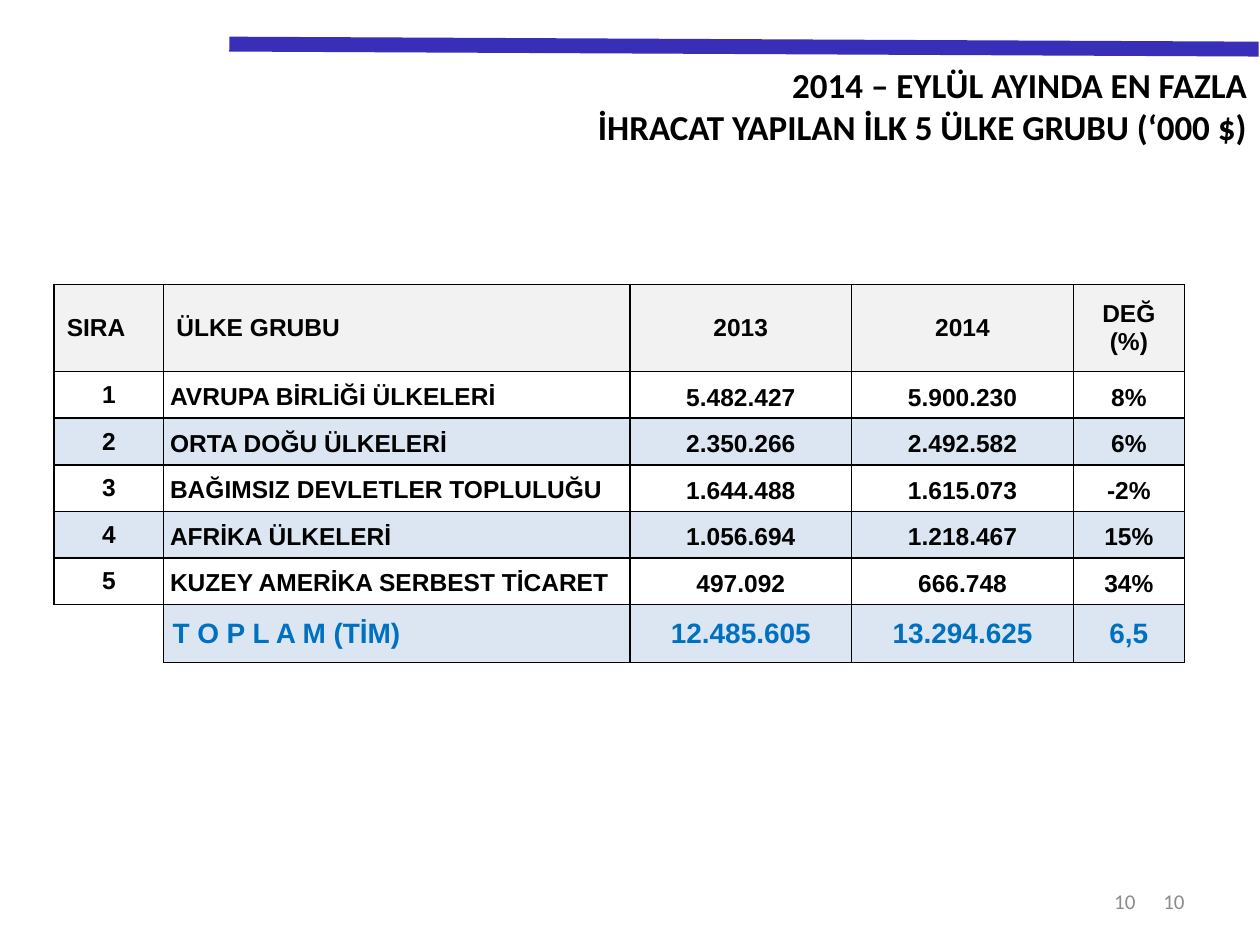
from lxml.etree import SubElement
from pptx import Presentation
from pptx.dml.color import RGBColor
from pptx.enum.shapes import MSO_CONNECTOR
from pptx.enum.text import MSO_ANCHOR, MSO_AUTO_SIZE, PP_ALIGN
from pptx.oxml.ns import qn
from pptx.util import Inches, Pt


def write(tf, lines, align, color, **font):
    """Fill a text frame with one paragraph per line, all formatted alike."""
    for i, line in enumerate(lines):
        p = tf.paragraphs[0] if i == 0 else tf.add_paragraph()
        p.alignment = align
        r = p.add_run()
        r.text = line
        r.font.color.rgb = RGBColor.from_string(color)
        for name, value in font.items():
            setattr(r.font, name, value)


def set_borders(cell, sides):
    """Draw 1 pt black borders on the given sides and hide the others."""
    tcPr = cell._tc.get_or_add_tcPr()
    for side in "LRTB":
        ln = SubElement(tcPr, qn(f"a:ln{side}"), w=str(Pt(1)))
        if side in sides:
            fill = SubElement(ln, qn("a:solidFill"))
            SubElement(fill, qn("a:srgbClr"), val="000000")
        else:
            SubElement(ln, qn("a:noFill"))


prs = Presentation()
prs.slide_width, prs.slide_height = Inches(10), Inches(7.5)
s = prs.slides.add_slide(prs.slide_layouts[5])

bar = s.shapes.add_connector(MSO_CONNECTOR.STRAIGHT, Inches(1.82), Inches(0.35),
                             Inches(9.99), Inches(0.39))
bar.line.color.rgb = RGBColor.from_string("382EB8")
bar.line.width = Pt(8.5)
SubElement(bar._element.spPr, qn("a:effectLst"))

title = s.shapes.title
title.left, title.top = Inches(1.06), Inches(0.45)
title.width, title.height = Inches(8.94), Inches(0.77)
tf = title.text_frame
tf.auto_size = MSO_AUTO_SIZE.NONE
tf.vertical_anchor = MSO_ANCHOR.TOP
write(tf, ["2014 – EYLÜL AYINDA EN FAZLA", "İHRACAT YAPILAN İLK 5 ÜLKE GRUBU (‘000 $)"],
      PP_ALIGN.RIGHT, "000000", name="Calibri", size=Pt(20), bold=True)

# The page number shows twice, side by side
for left, width in ((7.17, 2.33), (7.01, 2.1)):
    sp = s.shapes.add_textbox(Inches(left), Inches(6.95), Inches(width), Inches(0.4))
    tf = sp.text_frame
    tf.word_wrap = True
    tf.vertical_anchor = MSO_ANCHOR.MIDDLE
    write(tf, ["10"], PP_ALIGN.RIGHT, "8C8C8C", name="Calibri", size=Pt(12))

rows = [
    ("SIRA", "ÜLKE GRUBU", "2013", "2014", "DEĞ\n(%)"),
    ("1", "AVRUPA BİRLİĞİ ÜLKELERİ", "5.482.427", "5.900.230", "8%"),
    ("2", "ORTA DOĞU ÜLKELERİ", "2.350.266", "2.492.582", "6%"),
    ("3", "BAĞIMSIZ DEVLETLER TOPLULUĞU", "1.644.488", "1.615.073", "-2%"),
    ("4", "AFRİKA ÜLKELERİ", "1.056.694", "1.218.467", "15%"),
    ("5", "KUZEY AMERİKA SERBEST TİCARET", "497.092", "666.748", "34%"),
    ("", "T O P L A M (TİM)", "12.485.605", "13.294.625", "6,5"),
]
col_widths = [0.87, 3.7, 1.76, 1.76, 0.88]
row_heights = [0.69] + [0.37] * 5 + [0.46]
total_row = len(rows) - 1

table = s.shapes.add_table(len(rows), len(col_widths), Inches(0.43), Inches(2.26),
                           Inches(8.98), Inches(2.99)).table
table.first_row = table.horz_banding = False
for col, width in zip(table.columns, col_widths):
    col.width = Inches(width)
for row, height in zip(table.rows, row_heights):
    row.height = Inches(height)

for i, values in enumerate(rows):
    for j, value in enumerate(values):
        cell = table.cell(i, j)
        cell.vertical_anchor = MSO_ANCHOR.MIDDLE
        set_borders(cell, "LRTB" if value else "RT")
        if value and i % 2 == 0:
            cell.fill.solid()
            cell.fill.fore_color.rgb = RGBColor.from_string("DCE6F2" if i else "F2F2F2")
        else:
            cell.fill.background()
        if not value:
            continue

        if i > 0 and j > 0:
            side = 0.05 if j == 1 else 0.01
            cell.margin_left = cell.margin_right = Inches(side)
            cell.margin_top = Inches(0 if j == 1 else 0.01)
            cell.margin_bottom = 0
        is_total = i == total_row
        if is_total and j == 1:
            cell.margin_left = Inches(0.07)
        left_aligned = j == 1 or (i == 0 and j == 0)
        write(cell.text_frame, value.split("\n"),
              PP_ALIGN.LEFT if left_aligned else PP_ALIGN.CENTER,
              "0070C0" if is_total else "000000",
              name="Arial", size=Pt(16 if is_total else 14), bold=True)
        if 0 < i < total_row and j > 0:
            cell.text_frame.paragraphs[0].line_spacing = 1.15

prs.save("out.pptx")
